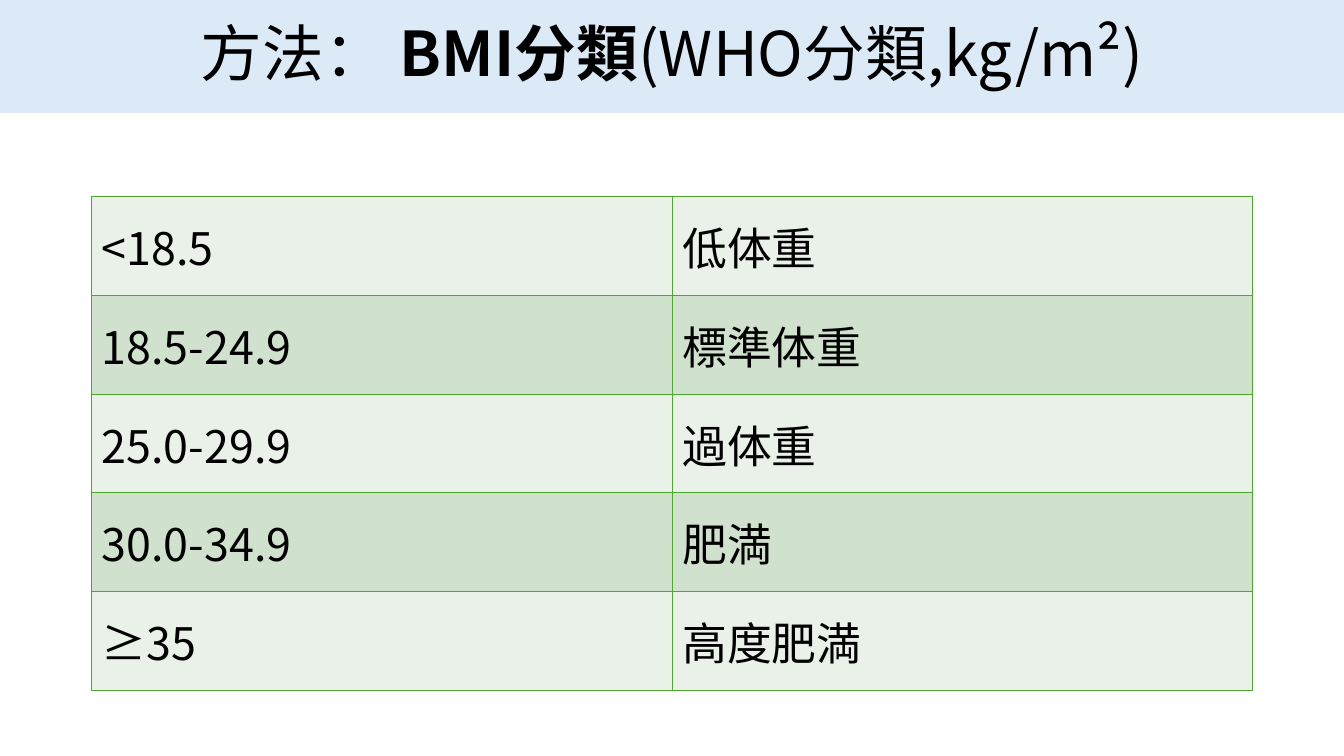
from typing import NamedTuple

from lxml import etree
from pptx import Presentation
from pptx.dml.color import RGBColor
from pptx.enum.shapes import MSO_SHAPE
from pptx.enum.text import MSO_ANCHOR, PP_ALIGN
from pptx.oxml.ns import qn
from pptx.util import Pt

RECTANGLE = MSO_SHAPE.RECTANGLE
MIDDLE = MSO_ANCHOR.MIDDLE
CENTER = PP_ALIGN.CENTER

FONT = "Noto Sans CJK JP"
COLORS = {
    "text": "000000",
    "banner": "DCEAF7",
    "border": "4EA72E",
    "light": "E9F1E8",
    "dark": "D0E1CD",
}
SLIDE_W, SLIDE_H = 960, 540
BANNER_H = 80.64
TABLE_LEFT, TABLE_TOP = 65.5, 140.4
COL_W, ROW_H = 414.72, 70.56
BORDER_W = 1


class TitlePart(NamedTuple):
    text: str
    bold: bool


class BmiClass(NamedTuple):
    bmi: str
    label: str


TITLE = [
    TitlePart("方法：", False),
    TitlePart(" BMI分類", True),
    TitlePart("(WHO分類,kg/m²)", False),
]
BMI_CLASSES = [
    BmiClass("<18.5", "低体重"),
    BmiClass("18.5-24.9", "標準体重"),
    BmiClass("25.0-29.9", "過体重"),
    BmiClass("30.0-34.9", "肥満"),
    BmiClass("≥35", "高度肥満"),
]


def rgb(name: str) -> RGBColor:
    return RGBColor.from_string(COLORS[name])


def format_run(r, size: float, bold: bool = False) -> None:
    r.font.size = Pt(size)
    r.font.bold = bold
    r.font.color.rgb = rgb("text")
    r.font.name = FONT
    # East Asian characters take their typeface from a separate element
    etree.SubElement(r.font._element, qn("a:ea"), typeface=FONT)


def add_borders(cell) -> None:
    """Line all four sides; call before the fill, which must come after them."""
    tc_pr = cell._tc.get_or_add_tcPr()
    for side in ("a:lnL", "a:lnR", "a:lnT", "a:lnB"):
        ln = etree.SubElement(tc_pr, qn(side), w=str(Pt(BORDER_W)))
        fill = etree.SubElement(ln, qn("a:solidFill"))
        etree.SubElement(fill, qn("a:srgbClr"), val=COLORS["border"])


def add_title(s) -> None:
    sp = s.shapes.add_shape(RECTANGLE, 0, 0, Pt(SLIDE_W), Pt(BANNER_H))
    sp.shadow.inherit = False
    sp.fill.solid()
    sp.fill.fore_color.rgb = rgb("banner")
    sp.line.fill.background()
    tf = sp.text_frame
    tf.word_wrap = True
    tf.vertical_anchor = MIDDLE
    p = tf.paragraphs[0]
    p.alignment = CENTER
    p.line_spacing = 0.9
    for part in TITLE:
        r = p.add_run()
        r.text = part.text
        format_run(r, 44, part.bold)


def fill_cell(cell, text: str, color: str) -> None:
    add_borders(cell)
    cell.fill.solid()
    cell.fill.fore_color.rgb = rgb(color)
    cell.vertical_anchor = MIDDLE
    p = cell.text_frame.paragraphs[0]
    p.text = text
    format_run(p.runs[0], 32)


def add_bmi_table(s) -> None:
    rows, cols = len(BMI_CLASSES), len(BmiClass._fields)
    table = s.shapes.add_table(
        rows, cols, Pt(TABLE_LEFT), Pt(TABLE_TOP), Pt(cols * COL_W), Pt(rows * ROW_H)
    ).table
    table.first_row = False
    for i, bmi_class in enumerate(BMI_CLASSES):
        color = "dark" if i % 2 else "light"
        for j, text in enumerate(bmi_class):
            fill_cell(table.cell(i, j), text, color)


def main() -> None:
    prs = Presentation()
    prs.slide_width, prs.slide_height = Pt(SLIDE_W), Pt(SLIDE_H)
    s = prs.slides.add_slide(prs.slide_layouts[6])
    add_title(s)
    add_bmi_table(s)
    prs.save("out.pptx")


if __name__ == "__main__":
    main()
